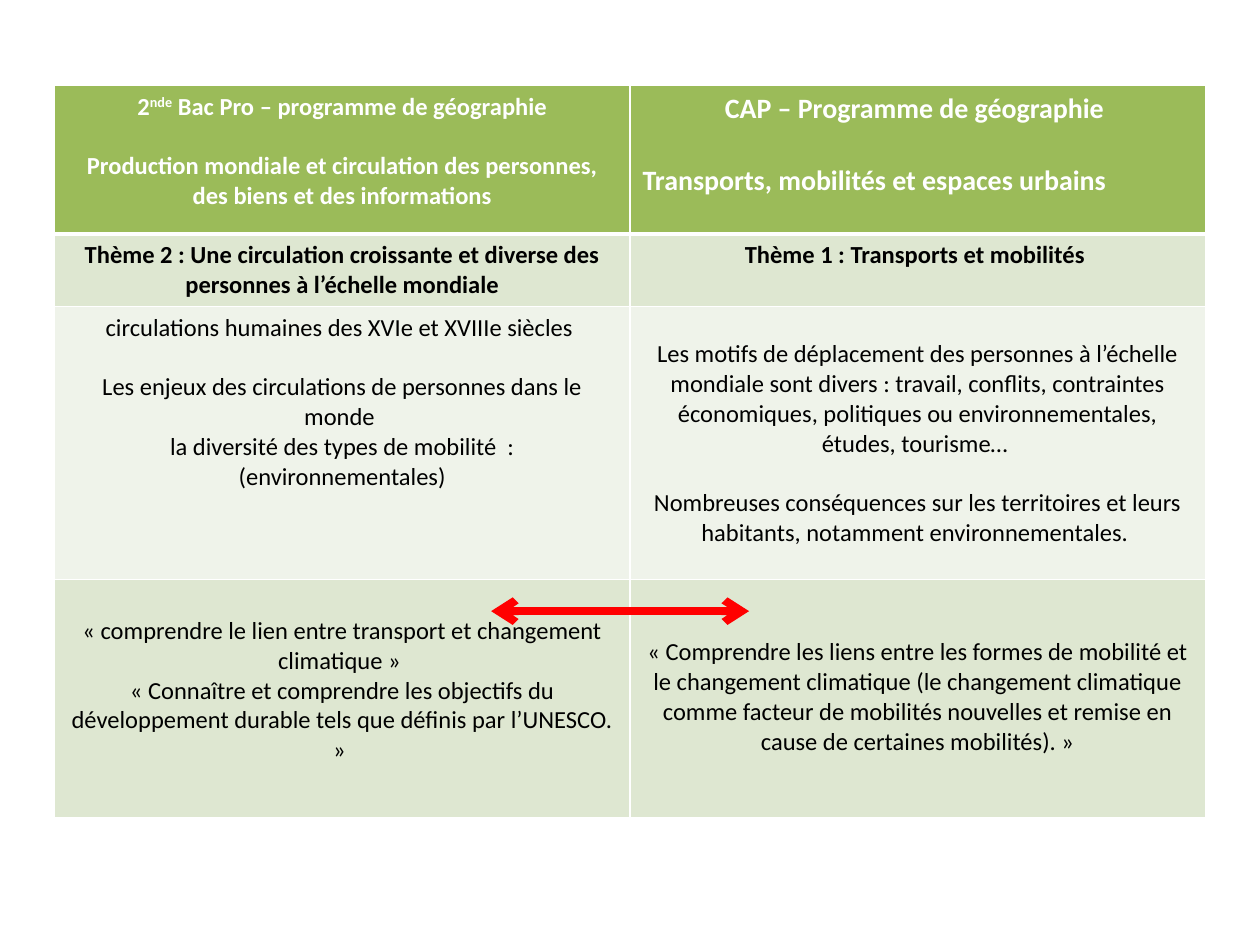
"""Build a slide comparing two geography syllabuses on transport and mobility."""
from lxml.etree import SubElement
from pptx import Presentation
from pptx.dml.color import RGBColor
from pptx.enum.shapes import MSO_CONNECTOR as Connector
from pptx.enum.text import PP_ALIGN as Align
from pptx.oxml.ns import qn
from pptx.util import Cm, Pt

WHITE = RGBColor(0xFF, 0xFF, 0xFF)
BLACK = RGBColor(0x00, 0x00, 0x00)
RED = RGBColor(0xFF, 0x00, 0x00)
GREEN = RGBColor(0x9B, 0xBB, 0x59)
LIGHT_GREEN = RGBColor(0xDE, 0xE7, 0xD1)
PALE_GREEN = RGBColor(0xEF, 0xF3, 0xEA)


def add_text(paragraph, text, size=14, bold=False, color=BLACK, align=Align.CENTER, before=0, raised=False):
    paragraph.alignment = align
    paragraph.space_before = Pt(before)
    run = paragraph.add_run()
    run.text = text
    run.font.name = "Calibri"
    run.font.size = Pt(size)
    run.font.bold = bold
    run.font.color.rgb = color
    if raised:
        run.font._element.set("baseline", "30000")


def add_border(cell, side, width):
    border = SubElement(cell._tc.get_or_add_tcPr(), qn(f"a:{side}"), w=str(Pt(width)))
    SubElement(SubElement(border, qn("a:solidFill")), qn("a:srgbClr"), val=str(WHITE))


heading = {"bold": True, "color": WHITE}
theme = {"bold": True}
gap = {"before": 17}

syllabus_rows = [
    (3.0, GREEN, [
        (0.13, [
            [("2", heading), ("nde", heading | {"raised": True}),
             (" Bac Pro – programme de géographie", heading)],
            [("Production mondiale et circulation des personnes, des biens et des informations", heading | gap)],
        ]),
        (0.13, [
            [("CAP – Programme de géographie ", heading | {"size": 16})],
            [("Transports, mobilités et espaces urbains ",
              heading | {"size": 16, "align": Align.LEFT, "before": 21.5})],
        ]),
    ]),
    (1.45, LIGHT_GREEN, [
        (0.13, [[("Thème 2 : Une circulation croissante et diverse des personnes à l’échelle mondiale", theme)]]),
        (0.13, [[("Thème 1 : Transports et mobilités ", theme)]]),
    ]),
    (5.5, PALE_GREEN, [
        (0.13, [
            [("circulations humaines des XVIe et XVIIIe siècles ", {})],
            [("Les enjeux des circulations de personnes dans le monde ", gap)],
            [("la diversité des types de mobilité  : (environnementales)", {})],
        ]),
        (0.66, [
            [("Les motifs de déplacement des personnes à l’échelle mondiale sont divers : travail, conflits, "
              "contraintes économiques, politiques ou environnementales, études, tourisme… ", {})],
            [("Nombreuses conséquences sur les territoires et leurs habitants, notamment environnementales. ", gap)],
        ]),
    ]),
    (4.8, LIGHT_GREEN, [
        (0.74, [
            [("« comprendre le lien entre transport et changement climatique » ", {})],
            [("« Connaître et comprendre les objectifs du développement durable tels que définis par "
              "l’UNESCO. » ", {})],
        ]),
        (1.17, [
            [("« Comprendre les liens entre les formes de mobilité et le changement climatique (le changement "
              "climatique comme facteur de mobilités nouvelles et remise en cause de certaines mobilités). »", {})],
        ]),
    ]),
]

prs = Presentation()
prs.slide_width, prs.slide_height = Cm(25.4), Cm(19.05)
slide = prs.slides.add_slide(prs.slide_layouts[6])

total_height = sum(height for height, _, _ in syllabus_rows)
syllabuses = slide.shapes.add_table(
    len(syllabus_rows), 2, Cm(1.1), Cm(1.72), Cm(23.2), Cm(total_height)).table

for row_index, (height, background, contents) in enumerate(syllabus_rows):
    syllabuses.rows[row_index].height = Cm(height)
    for column_index, (margin_top, paragraphs) in enumerate(contents):
        cell = syllabuses.cell(row_index, column_index)
        for side in ("lnL", "lnR", "lnT", "lnB"):
            under_heading = (row_index, side) in ((0, "lnB"), (1, "lnT"))
            add_border(cell, side, 3 if under_heading else 1)
        cell.fill.solid()
        cell.fill.fore_color.rgb = background
        cell.margin_top = Cm(margin_top)
        for index, runs in enumerate(paragraphs):
            frame = cell.text_frame
            paragraph = frame.add_paragraph() if index else frame.paragraphs[0]
            for text, style in runs:
                add_text(paragraph, text, **style)

climate_link = slide.shapes.add_connector(
    Connector.STRAIGHT, Cm(9.9), Cm(12.32), Cm(15.1), Cm(12.32))
climate_link.line.color.rgb = RED
climate_link.line.width = Pt(4.5)
for end in ("headEnd", "tailEnd"):
    SubElement(climate_link.line._get_or_add_ln(), qn(f"a:{end}"), type="arrow")
SubElement(climate_link._element.spPr, qn("a:effectLst"))

prs.save("out.pptx")
